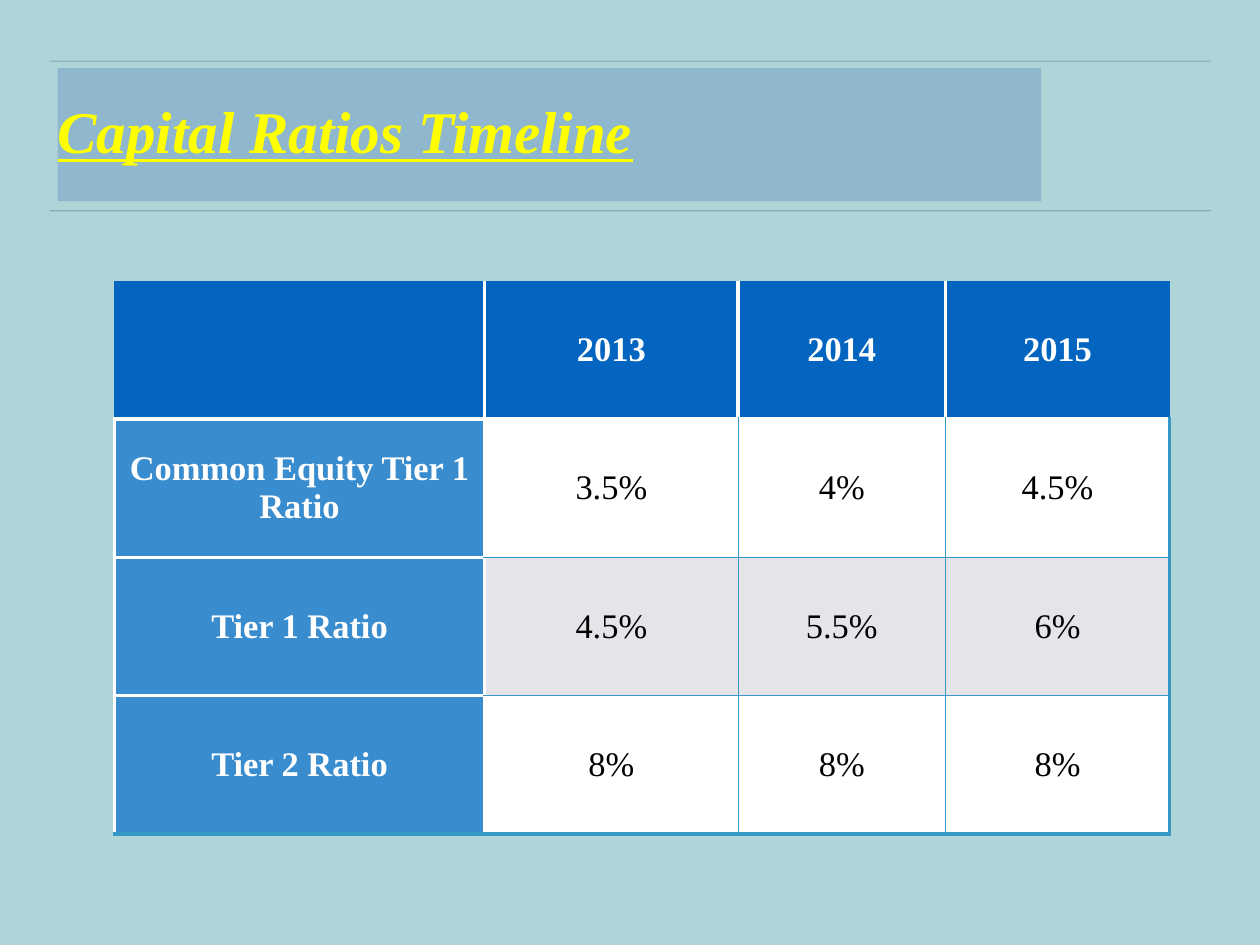
from dataclasses import dataclass
from typing import Optional

from lxml.etree import SubElement as Sub
from pptx import Presentation
from pptx.dml.color import RGBColor as Rgb
from pptx.enum.shapes import MSO_CONNECTOR as Link, MSO_SHAPE as Kind
from pptx.enum.text import MSO_ANCHOR as Anchor, PP_ALIGN as Align
from pptx.oxml.ns import qn
from pptx.util import Inches, Pt

WIDE, HIGH = Inches(14.22), Inches(10.67)
WHITE, BLUE, NAVY, SKY, GREY = "FFFFFF", "3797C6", "0365C0", "398CCE", "E3E5E8"
FACE = "Times New Roman"


@dataclass
class Edge:
    color: str
    width: float


@dataclass
class Box:
    """Place in percent of the slide's width and height."""
    left: float
    top: float
    width: float
    height: float

    def place(self) -> tuple:
        return col(self.left), row(self.top), col(self.width), row(self.height)


# Layout
TITLE = Box(4.57, 7.22, 78.06, 14.06)
GRID = Box(9.07, 29.71, 83.76, 58.56)
COLS = [29.4, 20.11, 16.46, 17.79]
RULES = [6.47, 22.31]
LEFT, RIGHT = 3.94, 96.13
THICK, THIN, PALE = Edge(BLUE, 3), Edge(BLUE, 1), Edge(WHITE, 3)

DATA = [
    ["", "2013", "2014", "2015"],
    ["Common Equity Tier 1 Ratio", "3.5%", "4%", "4.5%"],
    ["Tier 1 Ratio", "4.5%", "5.5%", "6%"],
    ["Tier 2 Ratio", "8%", "8%", "8%"],
]


def col(part: float) -> int:
    return round(WIDE * part / 100)


def row(part: float) -> int:
    return round(HIGH * part / 100)


def tint(code: str) -> Rgb:
    return Rgb.from_string(code)


def paint(thing, code: str) -> None:
    thing.fill.solid()
    thing.fill.fore_color.rgb = tint(code)


def put(thing, **form) -> None:
    for name, value in form.items():
        setattr(thing, name, value)


def write(para, text: str, code: str, **form) -> None:
    run = para.add_run()
    run.text = text
    put(run.font, name=FACE, **form)
    run.font.color.rgb = tint(code)


def rule(slide, top: float) -> None:
    line = slide.shapes.add_connector(
        Link.STRAIGHT, col(LEFT), row(top), col(RIGHT), row(top))
    line.line.width = Pt(1)
    line.line.color.rgb = tint("444444")
    shade = line._element.spPr.find(".//" + qn("a:srgbClr"))
    Sub(shade, qn("a:alpha"), val="30000")
    Sub(line._element.spPr, qn("a:effectLst"))


def title(slide) -> None:
    box = slide.shapes.add_shape(Kind.RECTANGLE, *TITLE.place())
    box.shadow.inherit = False
    paint(box, "8FB8CE")
    box.line.fill.background()
    frame = box.text_frame
    put(frame, margin_left=0, margin_right=0, margin_top=0, margin_bottom=0,
        vertical_anchor=Anchor.MIDDLE, word_wrap=True)
    para = frame.paragraphs[0]
    put(para, alignment=Align.LEFT, line_spacing=0.9)
    write(para, "Capital Ratios Timeline", "FFFF00", size=Pt(48),
          bold=True, italic=True, underline=True)


# Table borders: grid line n counts from 0 at the left or top
def upright(n: int, r: int) -> Optional[Edge]:
    if r == 0:
        return PALE if 0 < n < len(COLS) else None
    if n <= 1:
        return PALE
    return THICK if n == len(COLS) else THIN


def level(n: int, c: int) -> Optional[Edge]:
    if n == 0:
        return None
    if n == len(DATA):
        return THICK
    return PALE if n == 1 or c == 0 else THIN


def border(cell, side: str, edge: Optional[Edge]) -> None:
    width = Pt(edge.width) if edge else 0
    line = Sub(cell._tc.get_or_add_tcPr(), qn("a:ln" + side), w=str(width))
    if edge:
        Sub(Sub(line, qn("a:solidFill")), qn("a:srgbClr"), val=edge.color)
    else:
        Sub(line, qn("a:noFill"))


def back(r: int, c: int) -> str:
    if r == 0:
        return NAVY
    if c == 0:
        return SKY
    return WHITE if r % 2 else GREY


def table(slide) -> None:
    grid = slide.shapes.add_table(len(DATA), len(COLS), *GRID.place()).table
    for c, width in enumerate(COLS):
        grid.columns[c].width = col(width)
    for r, line in enumerate(DATA):
        grid.rows[r].height = row(GRID.height / len(DATA))
        for c, text in enumerate(line):
            cell = grid.cell(r, c)
            edges = {"L": upright(c, r), "R": upright(c + 1, r),
                     "T": level(r, c), "B": level(r + 1, c)}
            for side, edge in edges.items():
                border(cell, side, edge)
            paint(cell, back(r, c))
            pad = Inches(0.06)
            put(cell, margin_left=pad, margin_right=pad, margin_top=pad,
                margin_bottom=pad, vertical_anchor=Anchor.MIDDLE)
            if text:
                head = r == 0 or c == 0
                para = cell.text_frame.paragraphs[0]
                para.alignment = Align.CENTER
                write(para, text, WHITE if head else "000000",
                      size=Pt(28), bold=head)


def main() -> None:
    deck = Presentation()
    put(deck, slide_width=WIDE, slide_height=HIGH)
    slide = deck.slides.add_slide(deck.slide_layouts[6])
    paint(slide.background, "AFD5D9")
    for top in RULES:
        rule(slide, top)
    title(slide)
    table(slide)
    deck.save("out.pptx")


if __name__ == "__main__":
    main()
